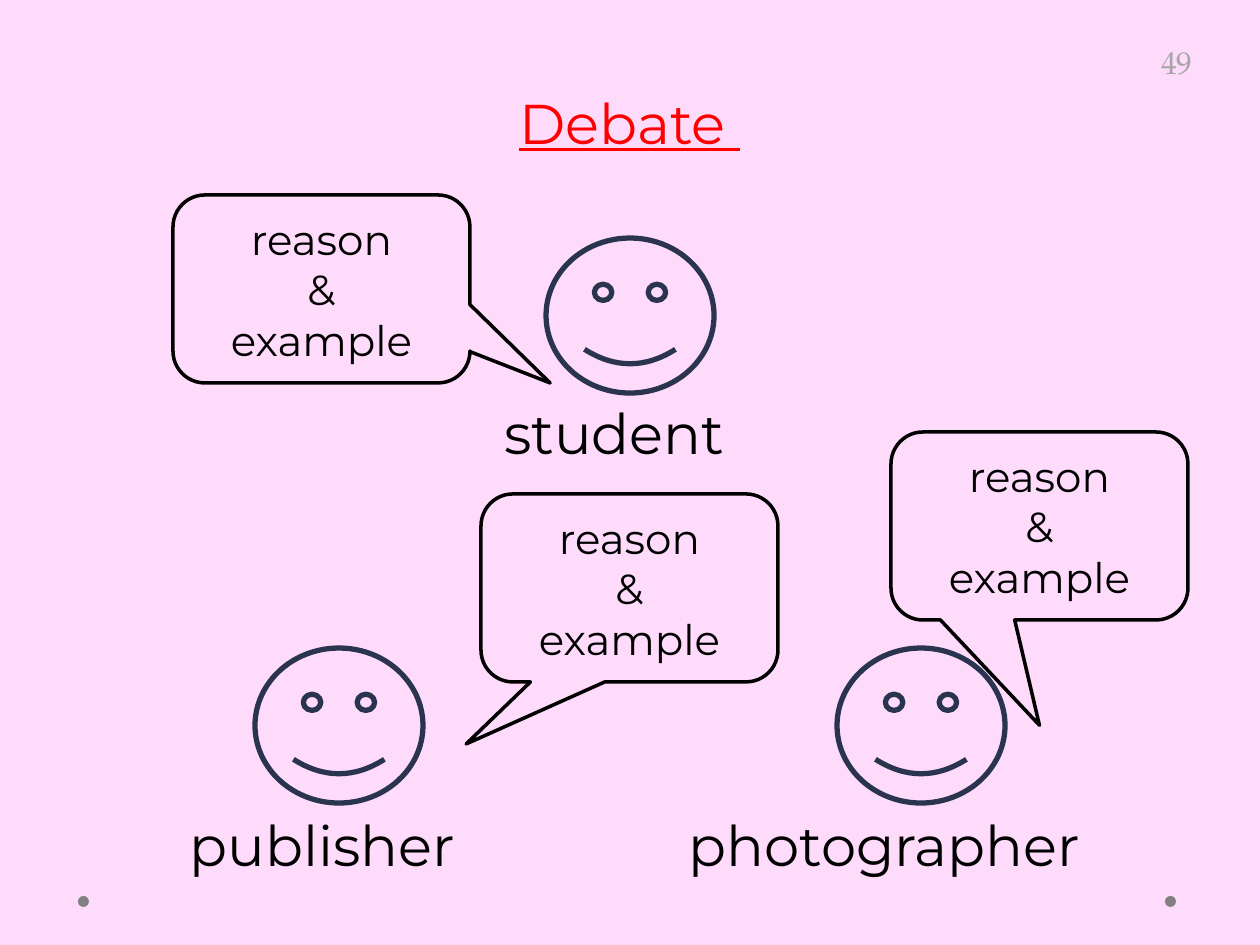
from dataclasses import dataclass

from pptx import Presentation
from pptx.dml.color import RGBColor
from pptx.enum.shapes import MSO_SHAPE
from pptx.enum.text import MSO_ANCHOR, PP_ALIGN
from pptx.util import Pt

OVAL = MSO_SHAPE.OVAL
SMILEY = MSO_SHAPE.SMILEY_FACE
CALLOUT = MSO_SHAPE.ROUNDED_RECTANGULAR_CALLOUT
CENTER, RIGHT = PP_ALIGN.CENTER, PP_ALIGN.RIGHT
TOP, MIDDLE = MSO_ANCHOR.TOP, MSO_ANCHOR.MIDDLE

TITLE = "Debate "
PAGE_NUMBER = "49"
ARGUMENT = ["reason", "&", "example"]

# name, face centre x, face top, label centre x, label top, label width
SPEAKERS = [
    ("publisher", 339, 648, 338, 804, 586),
    ("student", 630, 238, 630, 392, 471),
    ("photographer", 921, 648, 900, 804, 471),
]
# left, top, tail tip as a share of the size, measured from the centre
CALLOUTS = [
    (173, 195, 0.77, 0.5),
    (891, 432, 0, 1.06),
    (481, 494, -0.55, 0.83),
]
DOT_LEFTS = [78, 1165]

SLIDE_SIZE = (1260, 945)
FACE_SIZE = (168, 155)
CALLOUT_SIZE = (297, 188)
DOT_TOP, DOT_SIZE = 896, 11
LINE_HEIGHT = 81
LABEL_RIGHT_INSET = 44
CORNER = 0.17
EMU_PER_PX = 914400 / 126


@dataclass(frozen=True)
class Theme:
    background: str = "FEDAFB"
    text: str = "000000"
    title: str = "FF0000"
    number: str = "A6A6A6"
    dot: str = "808080"
    face: str = "2A344F"
    font: str = "Montserrat"
    number_font: str = "TeX Gyre Pagella"
    heading_size: int = 32
    body_size: int = 24
    number_size: int = 18
    face_line: int = 3
    callout_line: int = 2


THEME = Theme()


def px(value):
    return round(value * EMU_PER_PX)


def color(code):
    return RGBColor.from_string(code)


def write(shape, lines, font_color, size, align=CENTER, anchor=TOP,
          name=THEME.font, underline=None):
    frame = shape.text_frame
    frame.word_wrap = True
    frame.vertical_anchor = anchor
    font_format = {"name": name, "size": Pt(size), "underline": underline}
    for index, line in enumerate(lines):
        paragraph = frame.paragraphs[0] if index == 0 else frame.add_paragraph()
        paragraph.alignment = align
        run = paragraph.add_run()
        run.text = line
        run.font.color.rgb = color(font_color)
        for attribute, value in font_format.items():
            setattr(run.font, attribute, value)


def add_text(slide, box, text, *style, **options):
    shape = slide.shapes.add_textbox(*map(px, box))
    write(shape, [text], *style, **options)
    return shape


def add_outline(slide, kind, box, line_color, line_width):
    """Add an unfilled preset shape."""
    shape = slide.shapes.add_shape(kind, *map(px, box))
    shape.shadow.inherit = False
    shape.fill.background()
    shape.line.color.rgb = color(line_color)
    shape.line.width = Pt(line_width)
    return shape


def add_dot(slide, left):
    shape = slide.shapes.add_shape(
        OVAL, *map(px, (left, DOT_TOP, DOT_SIZE, DOT_SIZE)))
    shape.shadow.inherit = False
    shape.fill.solid()
    shape.fill.fore_color.rgb = color(THEME.dot)
    shape.line.fill.background()


def add_speaker(slide, name, face_x, face_top, label_x, label_top, label_width):
    face_box = (face_x - FACE_SIZE[0] / 2, face_top, *FACE_SIZE)
    add_outline(slide, SMILEY, face_box, THEME.face, THEME.face_line)
    label_box = (label_x - label_width / 2, label_top, label_width, LINE_HEIGHT)
    label = add_text(slide, label_box, name, THEME.text, THEME.heading_size)
    label.text_frame.margin_right = px(LABEL_RIGHT_INSET)


def add_callout(slide, left, top, *tip):
    shape = add_outline(slide, CALLOUT, (left, top, *CALLOUT_SIZE),
                        THEME.text, THEME.callout_line)
    for index, value in enumerate((*tip, CORNER)):
        shape.adjustments[index] = value
    write(shape, ARGUMENT, THEME.text, THEME.body_size, anchor=MIDDLE)


def main():
    presentation = Presentation()
    presentation.slide_width, presentation.slide_height = map(px, SLIDE_SIZE)
    slide = presentation.slides.add_slide(presentation.slide_layouts[6])
    slide.background.fill.solid()
    slide.background.fill.fore_color.rgb = color(THEME.background)

    for left in DOT_LEFTS:
        add_dot(slide, left)
    add_text(slide, (1116, 37, 89, 50), PAGE_NUMBER, THEME.number,
             THEME.number_size, align=RIGHT, name=THEME.number_font)
    add_text(slide, (69, 82, 1122, LINE_HEIGHT), TITLE, THEME.title,
             THEME.heading_size, underline=True)
    for speaker in SPEAKERS:
        add_speaker(slide, *speaker)
    for callout in CALLOUTS:
        add_callout(slide, *callout)

    presentation.save("out.pptx")


if __name__ == "__main__":
    main()
